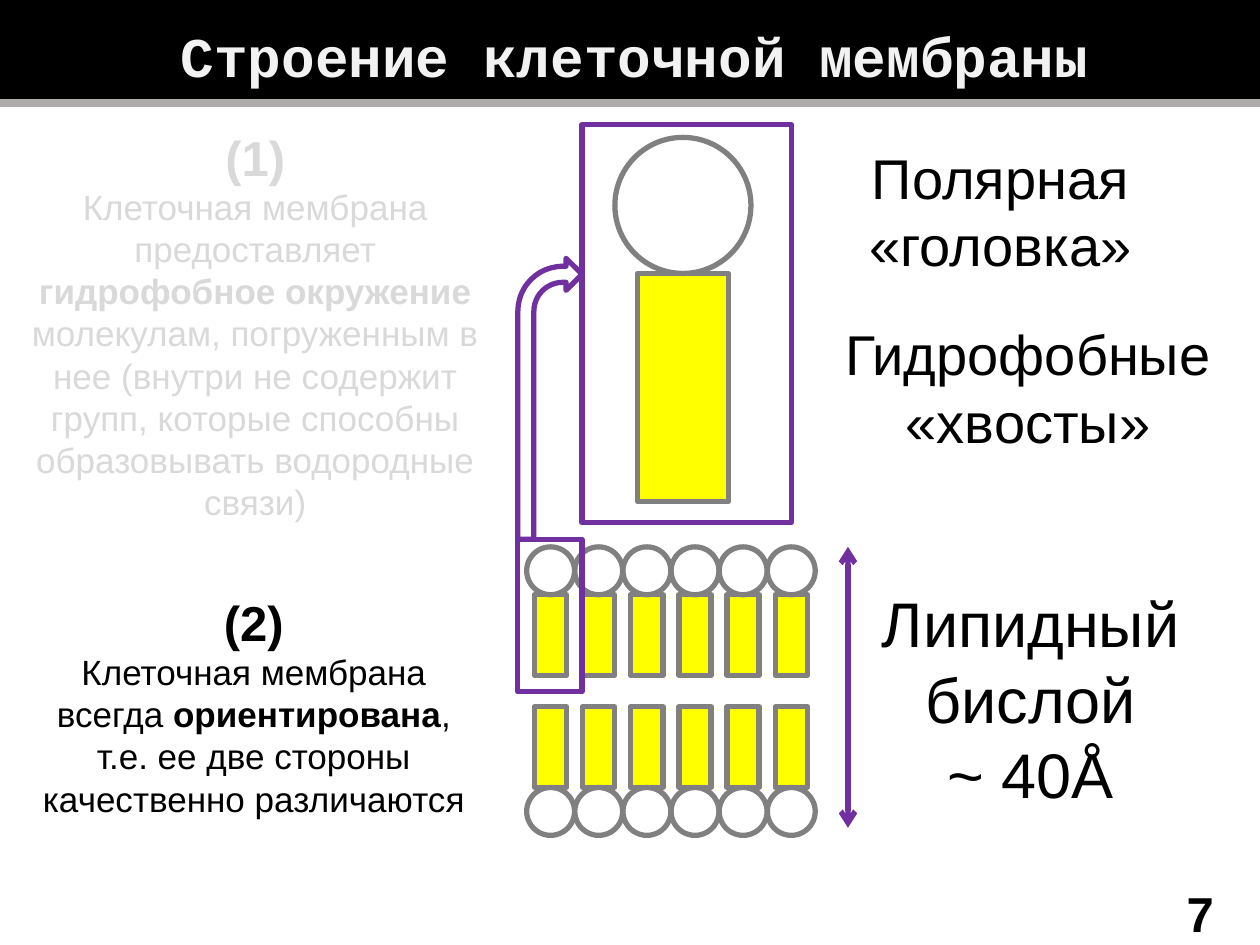
from lxml import etree
from pptx import Presentation
from pptx.dml.color import RGBColor
from pptx.enum.shapes import MSO_CONNECTOR, MSO_SHAPE
from pptx.enum.text import MSO_ANCHOR, PP_ALIGN
from pptx.oxml.ns import qn
from pptx.util import Inches, Pt

RECT, OVAL, BENT_ARROW = MSO_SHAPE.RECTANGLE, MSO_SHAPE.OVAL, MSO_SHAPE.BENT_ARROW
STRAIGHT = MSO_CONNECTOR.STRAIGHT
CENTER = PP_ALIGN.CENTER
TOP, MIDDLE = MSO_ANCHOR.TOP, MSO_ANCHOR.MIDDLE

THEME = {
    "text": "000000", "title": "F2F2F2", "band": "000000", "rule": "AFABAB",
    "tail": "FFFF00", "outline": "808080", "accent": "7030A0", "veil": "FFFFFF",
    "font": "Arial", "title_font": "Courier New",
    "body_size": 20, "heading_size": 28, "label_size": 32, "bilayer_size": 36,
    "outline_width": 3, "rule_width": 4.75,
}

# Content: a paragraph is a list of (text, bold) runs
TITLE = "Строение клеточной мембраны"
PAGE_NUMBER = "7"
LABELS = [  # box, size, lines
    ((6.53, 2.49, 3.26, 1.18), "label_size", ["Гидрофобные «хвосты»"]),
    ((6.25, 1.09, 3.38, 0.95), "label_size", ["Полярная «головка»"]),
    ((6.85, 4.59, 2.66, 1.92), "bilayer_size", ["Липидный", "бислой", "~ 40Å"]),
]
STATEMENTS = [  # box, heading, body runs
    ((0, 0.96, 4.05, 3.26), "(1)", [
        ("Клеточная мембрана предоставляет ", False),
        ("гидрофобное окружение ", True),
        ("молекулам, погруженным в нее (внутри не содержит групп, "
         "которые способны образовывать водородные связи)", False)]),
    ((0.18, 4.65, 3.67, 1.92), "(2)", [
        ("Клеточная мембрана всегда ", False),
        ("ориентирована", True),
        (", т.е. ее две стороны качественно различаются", False)]),
]

# Bilayer geometry
LIPID_COUNT, LIPID_LEFT, LIPID_PITCH = 6, 4.18, 0.382
HEAD_SIZE, TAIL_WIDTH, TAIL_HEIGHT = 0.38, 0.255, 0.64
LEAFLETS = [(4.34, 4.72), (6.25, 5.61)]  # head top, tail top

prs = Presentation()
prs.slide_width, prs.slide_height = Inches(10), Inches(7.5)
s = prs.slides.add_slide(prs.slide_layouts[6])


def color(name):
    return RGBColor.from_string(THEME[name])


def add_shape(kind, box, fill=None, line=None):
    sp = s.shapes.add_shape(kind, *map(Inches, box))
    sp.shadow.inherit = False
    if fill:
        sp.fill.solid()
        sp.fill.fore_color.rgb = color(fill)
    else:
        sp.fill.background()
    if line:
        sp.line.color.rgb = color(line)
        sp.line.width = Pt(THEME["outline_width"])
    else:
        sp.line.fill.background()
    return sp


def add_line(start, end, line, width, arrows=False):
    cx = s.shapes.add_connector(STRAIGHT, *map(Inches, start + end))
    cx.line.color.rgb = color(line)
    cx.line.width = Pt(THEME[width])
    if arrows:
        ln = cx.line._get_or_add_ln()
        for tag in ("a:headEnd", "a:tailEnd"):
            etree.SubElement(ln, qn(tag)).set("type", "arrow")
    etree.SubElement(cx._element.spPr, qn("a:effectLst"))


def add_text(box, paragraphs, font="font", fill="text", anchor=TOP):
    """Each paragraph is (size name, [(text, bold), ...])."""
    tf = s.shapes.add_textbox(*map(Inches, box)).text_frame
    tf.word_wrap = True
    tf.vertical_anchor = anchor
    for i, (size, runs) in enumerate(paragraphs):
        p = tf.add_paragraph() if i else tf.paragraphs[0]
        p.alignment = CENTER
        for text, bold in runs:
            r = p.add_run()
            r.text = text
            r.font.name = THEME[font]
            r.font.size = Pt(THEME[size])
            r.font.bold = bold
            r.font.color.rgb = color(fill)
    return tf


def add_lipid(left, head_top, tail_top, head_size, tail_width, tail_height):
    tail_left = left + (head_size - tail_width) / 2
    add_shape(RECT, (tail_left, tail_top, tail_width, tail_height), "tail", "outline")
    add_shape(OVAL, (left, head_top, head_size, head_size), line="outline")


# Title band and page number
add_shape(RECT, (0, 0, 10, 0.81), "band")
title = add_text((0.54, 0.14, 9, 0.56), [("label_size", [(TITLE, True)])],
                 "title_font", "title", MIDDLE)
title.margin_left = title.margin_right = title.margin_bottom = 0
title.margin_top = Inches(0.04)
add_text((9.13, 6.96, 0.79, 0.54), [("heading_size", [(PAGE_NUMBER, True)])])

# Lipid bilayer
for i in range(LIPID_COUNT):
    for head_top, tail_top in LEAFLETS:
        add_lipid(LIPID_LEFT + i * LIPID_PITCH, head_top, tail_top,
                  HEAD_SIZE, TAIL_WIDTH, TAIL_HEIGHT)

# Enlarged lipid with its frames and callout arrow
add_lipid(4.88, 1.09, 2.17, 1.08, 0.72, 1.81)
add_shape(RECT, (4.62, 0.99, 1.66, 3.16), line="accent")
add_shape(RECT, (4.11, 4.28, 0.51, 1.21), line="accent")
callout = add_shape(BENT_ARROW, (4.11, 2.05, 0.51, 2.23), line="accent")
for i, value in enumerate((0.25, 0.25, 0.25, 0.7)):
    callout.adjustments[i] = value

# Bilayer thickness
add_line((6.73, 4.34), (6.73, 6.57), "accent", "outline_width", arrows=True)

# Labels and statements
for box, size, lines in LABELS:
    add_text(box, [(size, [(line, False)]) for line in lines])
for box, heading, body in STATEMENTS:
    add_text(box, [("heading_size", [(heading, True)]), ("body_size", body)])

# Translucent veil over the first statement
veil = add_shape(RECT, (0.13, 0.96, 3.8, 3.38), "veil")
veil_color = veil._element.spPr.find(qn("a:solidFill"))[0]
etree.SubElement(veil_color, qn("a:alpha")).set("val", "85000")

# Rule under the title band
add_line((10, 0.82), (0, 0.82), "rule", "rule_width")

prs.save("out.pptx")
